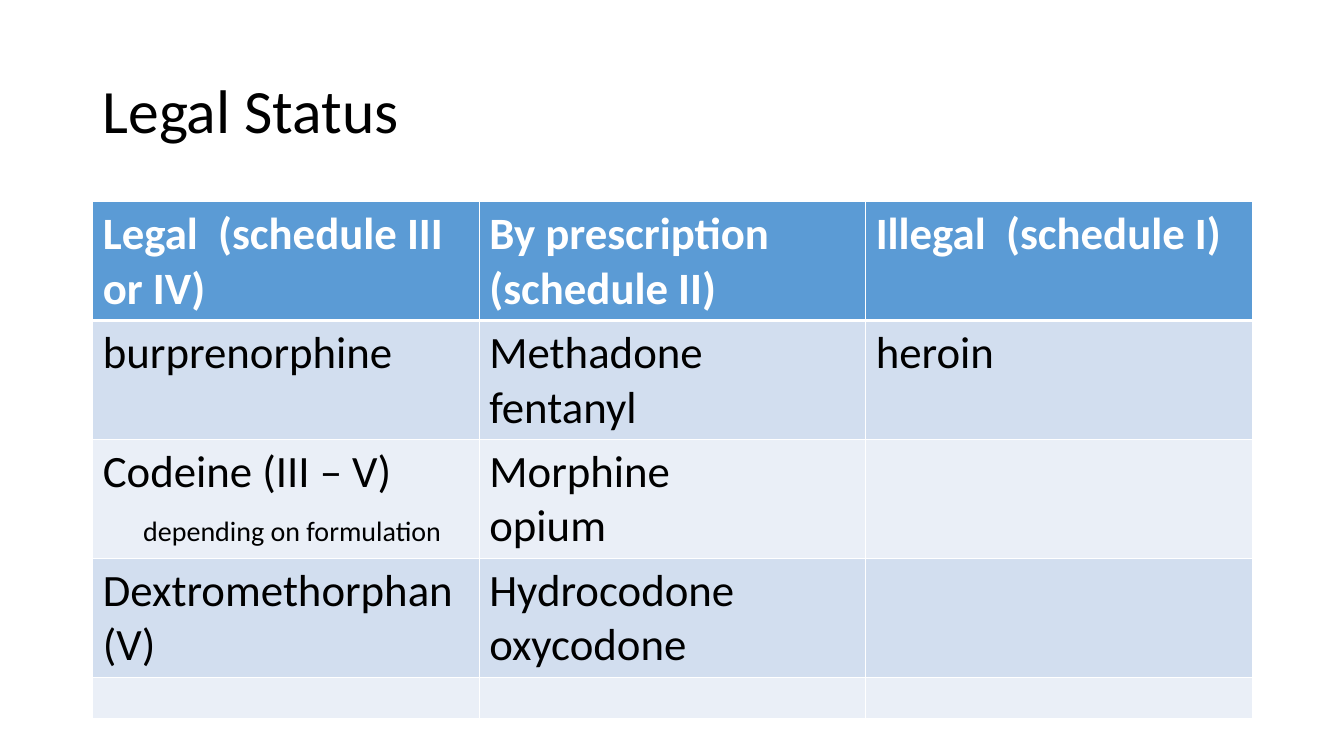
"""Build the Legal Status slide with its schedule table."""
from pptx import Presentation
from pptx.dml.color import RGBColor as RGB
from pptx.enum.text import MSO_ANCHOR as Anchor
from pptx.oxml.ns import qn
from pptx.util import Inches, Pt
from lxml.etree import SubElement as Sub

TITLE = "Legal Status"
NOTE = "depending on formulation"
ROWS = [
    [["Legal  (schedule III or IV)"], ["By prescription (schedule II)"],
     ["Illegal  (schedule I)"]],
    [["burprenorphine"], ["Methadone", "fentanyl"], ["heroin"]],
    [["Codeine (III – V)", NOTE], ["Morphine", "opium"], []],
    [["Dextromethorphan (V)"], ["Hydrocodone", "oxycodone"], []],
    [[], [], []],
]
FONT, WHITE, BLACK = "Calibri", "FFFFFF", "000000"
HEAD, BANDS = "5B9BD5", ("EAEFF7", "D2DEEF")
LEFT, WIDTH, TOP = 0.92, 11.5, 2
TALL, SHORT = 1.18, 0.41


def paint(target, color):
    target.rgb = RGB.from_string(color)


def write(para, text, size, color, bold=False):
    run = para.add_run()
    run.text = text
    run.font.name, run.font.size, run.font.bold = FONT, Pt(size), bold
    paint(run.font.color, color)


def edge(cell, side, width):
    line = Sub(cell._tc.get_or_add_tcPr(), qn("a:ln" + side), w=str(Pt(width)))
    Sub(Sub(line, qn("a:solidFill")), qn("a:srgbClr"), val=WHITE)


def fill_cell(cell, lines, row):
    for side in "LRTB":
        thick = (row, side) in ((0, "B"), (1, "T"))
        edge(cell, side, 3 if thick else 1)
    cell.fill.solid()
    paint(cell.fill.fore_color, BANDS[row % 2] if row else HEAD)
    frame = cell.text_frame
    for i, text in enumerate(lines):
        para = frame.paragraphs[0] if i == 0 else frame.add_paragraph()
        note = text == NOTE
        if note:
            para.space_before = Pt(11.4)
            para._p.get_or_add_pPr().set("marL", str(Inches(0.4)))
        write(para, text, 20 if note else 32, BLACK if row else WHITE, row == 0)


def main():
    deck = Presentation()
    deck.slide_width, deck.slide_height = Inches(13.33), Inches(7.5)
    slide = deck.slides.add_slide(deck.slide_layouts[6])

    box = slide.shapes.add_textbox(
        Inches(LEFT), Inches(0.4), Inches(WIDTH), Inches(1.45))
    frame = box.text_frame
    frame.word_wrap = True
    frame.vertical_anchor = Anchor.MIDDLE
    frame.paragraphs[0].line_spacing = 0.9
    write(frame.paragraphs[0], TITLE, 44, BLACK)

    highs = [TALL if any(row) else SHORT for row in ROWS]
    table = slide.shapes.add_table(
        len(ROWS), len(ROWS[0]), Inches(LEFT), Inches(TOP),
        Inches(WIDTH), Inches(sum(highs))).table
    for r, (row, high) in enumerate(zip(ROWS, highs)):
        table.rows[r].height = Inches(high)
        for c, lines in enumerate(row):
            fill_cell(table.cell(r, c), lines, r)

    deck.save("out.pptx")


if __name__ == "__main__":
    main()
